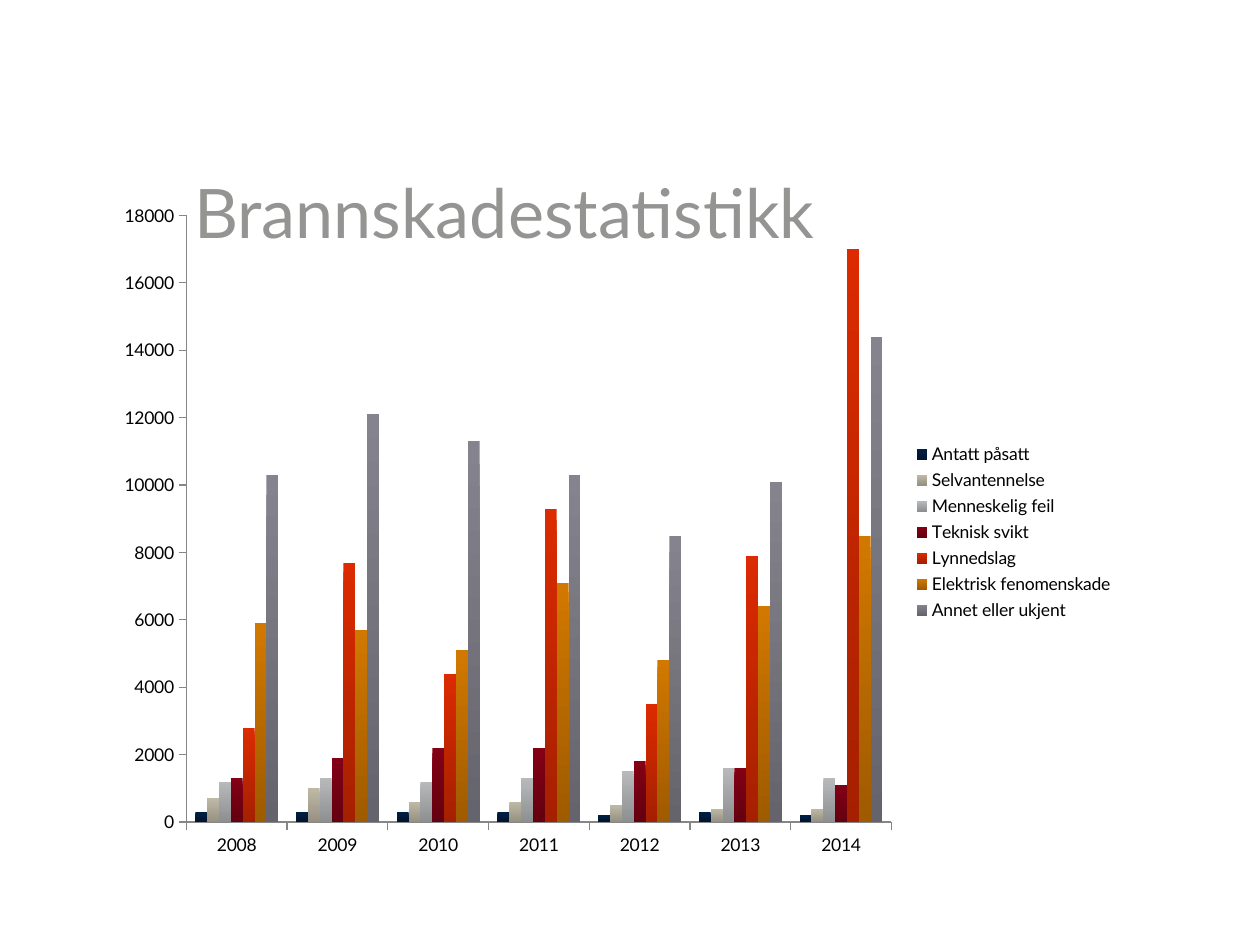
from lxml import etree
from pptx import Presentation
from pptx import util as u
from pptx.chart import data as chart_data
from pptx.dml import color
from pptx.enum import chart as ch, text
from pptx.oxml import ns

FONT = "Lato"
YEARS = ["2008", "2009", "2010", "2011", "2012", "2013", "2014"]
# Cause of fire: yearly values, top and bottom colour of its columns
CAUSES = {
    "Antatt påsatt": ([300, 300, 300, 300, 200, 300, 200], "001F44", "00152F"),
    "Selvantennelse": ([700, 1000, 600, 600, 500, 400, 400], "BEB8A6", "979181"),
    "Menneskelig feil": ([1200, 1300, 1200, 1300, 1500, 1600, 1300], "B8B9BB", "8E8F91"),
    "Teknisk svikt": ([1300, 1900, 2200, 2200, 1800, 1600, 1100], "830015", "640010"),
    "Lynnedslag": ([2800, 7700, 4400, 9300, 3500, 7900, 17000], "DC2B00", "A52000"),
    "Elektrisk fenomenskade": ([5900, 5700, 5100, 7100, 4800, 6400, 8500], "D17800", "9F5B00"),
    "Annet eller ukjent": ([10300, 12100, 11300, 10300, 8500, 10100, 14400], "85848E", "65646C"),
}


def rgb(value):
    return color.RGBColor.from_string(value)


def style_font(font, size, colour):
    font.name = FONT
    font.size = u.Pt(size)
    font.color.rgb = rgb(colour)


def style_axis(axis):
    axis.has_major_gridlines = False
    axis.major_tick_mark = ch.XL_TICK_MARK.OUTSIDE
    axis.minor_tick_mark = ch.XL_TICK_MARK.NONE
    axis.format.line.color.rgb = rgb("868686")
    axis.format.line.width = u.Pt(0.75)


def shade_columns(series, top, bottom):
    fill = series.format.fill
    fill.gradient()
    fill.gradient_angle = 270
    for stop, colour in zip(fill.gradient_stops, (top, bottom)):
        stop.color.rgb = rgb(colour)
    series.invert_if_negative = False


def place_plot(chart, **fractions):
    """Fix the inner plot area, in fractions of the chart frame."""
    plot_area = chart.plots[0]._element.getparent()
    for old in plot_area.findall(ns.qn("c:layout")):
        plot_area.remove(old)
    layout = etree.Element(ns.qn("c:layout"))
    manual = etree.SubElement(layout, ns.qn("c:manualLayout"))
    settings = {"layoutTarget": "inner", "xMode": "edge", "yMode": "edge", **fractions}
    for tag, value in settings.items():
        etree.SubElement(manual, ns.qn(f"c:{tag}")).set("val", str(value))
    plot_area.insert(0, layout)


def add_fire_chart(slide):
    data = chart_data.CategoryChartData(number_format="0")
    data.categories = YEARS
    for cause, (values, _, _) in CAUSES.items():
        data.add_series(cause, values)
    chart = slide.shapes.add_chart(
        ch.XL_CHART_TYPE.COLUMN_CLUSTERED,
        u.Pt(59.8), u.Pt(111.6), u.Pt(583.9), u.Pt(385.2), data,
    ).chart
    chart.has_title = False
    style_font(chart.font, 10, "000000")

    # Axes and legend
    style_axis(chart.category_axis)
    style_axis(chart.value_axis)
    chart.value_axis.minimum_scale = 0
    chart.value_axis.maximum_scale = 18000
    chart.value_axis.major_unit = 2000
    chart.has_legend = True
    chart.legend.position = ch.XL_LEGEND_POSITION.RIGHT
    chart.legend.include_in_layout = False

    # Columns
    plot = chart.plots[0]
    plot.gap_width = 150
    plot.overlap = 0
    plot.vary_by_categories = False
    for series, (_, top, bottom) in zip(plot.series, CAUSES.values()):
        shade_columns(series, top, bottom)
    place_plot(chart, x=0.08, y=0.03, w=0.69, h=0.9)


def set_title(slide, wording):
    title = slide.shapes.title
    title.left, title.top = u.Pt(110.9), u.Pt(97.2)
    title.width, title.height = u.Pt(408.2), u.Pt(47.5)
    frame = title.text_frame
    frame.text = wording
    frame.margin_left = frame.margin_top = frame.margin_right = frame.margin_bottom = 0
    frame.word_wrap = True
    frame.auto_size = text.MSO_AUTO_SIZE.SHAPE_TO_FIT_TEXT
    frame.vertical_anchor = text.MSO_ANCHOR.TOP
    heading = frame.paragraphs[0]
    heading.alignment = text.PP_ALIGN.LEFT
    style_font(heading.font, 39, "949593")
    # The title lies in front of the chart
    slide.shapes._spTree.append(title._element)


def main():
    deck = Presentation()
    deck.slide_width, deck.slide_height = u.Pt(720), u.Pt(540)
    slide = deck.slides.add_slide(deck.slide_layouts[5])
    add_fire_chart(slide)
    set_title(slide, "Brannskadestatistikk")
    deck.save("out.pptx")


if __name__ == "__main__":
    main()
